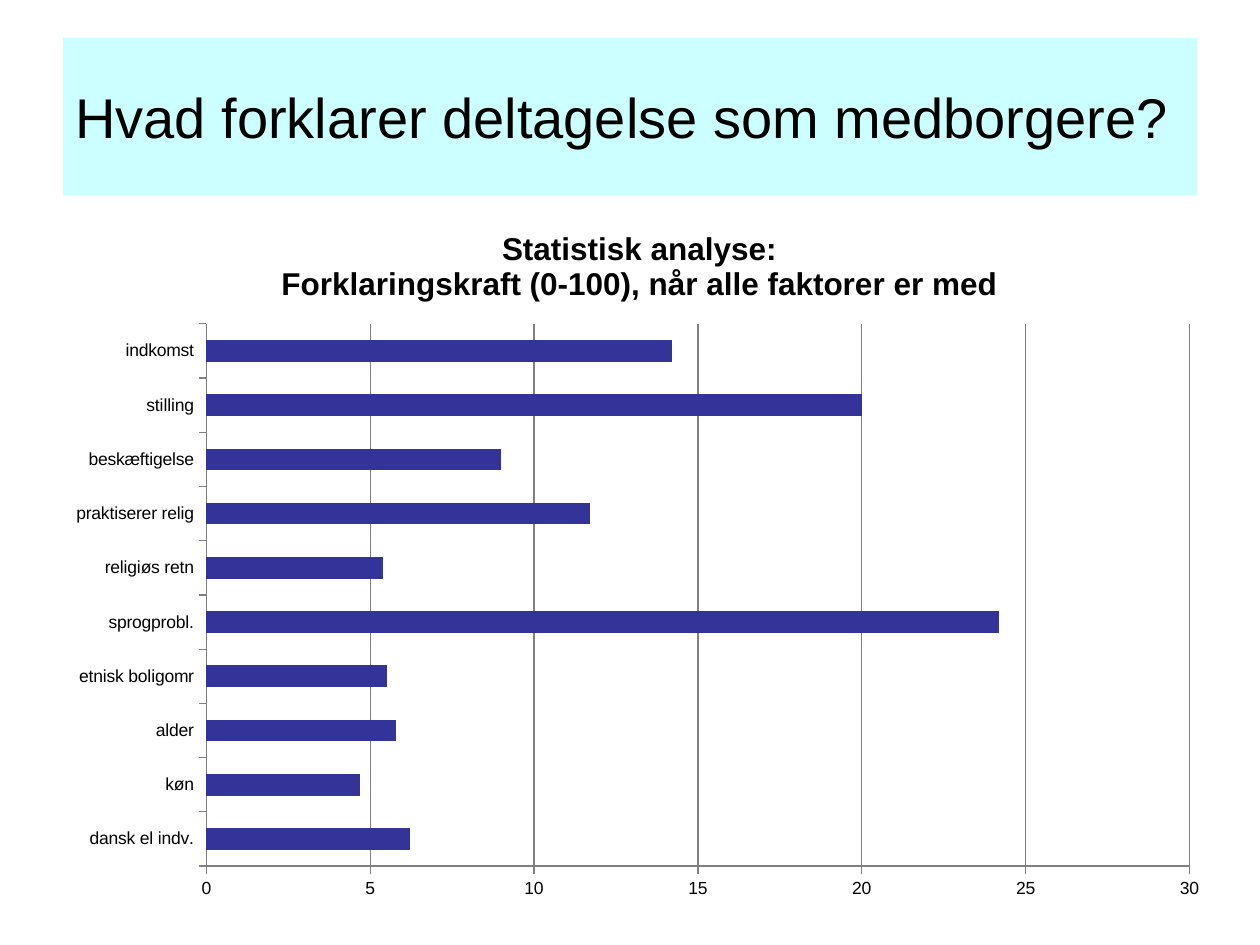
import pptx
import pptx.chart.data
import pptx.dml.color
import pptx.enum.chart
import pptx.enum.shapes
import pptx.enum.text
import pptx.oxml
import pptx.oxml.ns
import pptx.util
from pptx.util import Inches

FACTORS = {
    "dansk el indv.": 6.2,
    "køn": 4.7,
    "alder": 5.8,
    "etnisk boligomr": 5.5,
    "sprogprobl.": 24.2,
    "religiøs retn": 5.4,
    "praktiserer relig": 11.7,
    "beskæftigelse": 9,
    "stilling": 20,
    "indkomst": 14.2,
}


def color(value):
    return pptx.dml.color.RGBColor.from_string(value)


class SlideBuilder:
    typeface = "Arial"
    ink = "000000"
    banner_fill = "CCFFFF"
    bar_fill = "333399"
    grid_line = "808080"

    def __init__(self, slide):
        self.slide = slide

    def style_font(self, font, size, bold=False):
        font.name = self.typeface
        font.size = pptx.util.Pt(size)
        font.bold = bold
        font.color.rgb = color(self.ink)

    def style_line(self, line):
        line.color.rgb = color(self.grid_line)
        line.width = pptx.util.Pt(0.75)

    def banner(self, text, left, top, width, height):
        box = self.slide.shapes.add_shape(
            pptx.enum.shapes.MSO_SHAPE.RECTANGLE, left, top, width, height)
        box.shadow.inherit = False
        box.fill.solid()
        box.fill.fore_color.rgb = color(self.banner_fill)
        box.line.fill.background()
        frame = box.text_frame
        frame.word_wrap = True
        frame.vertical_anchor = pptx.enum.text.MSO_ANCHOR.MIDDLE
        frame.text = text
        para = frame.paragraphs[0]
        para.alignment = pptx.enum.text.PP_ALIGN.LEFT
        self.style_font(para.runs[0].font, 32)

    def bar_chart(self, title_lines, values, left, top, width, height):
        chart_data = pptx.chart.data.CategoryChartData()
        chart_data.categories = list(values)
        chart_data.add_series("Series 1", list(values.values()))
        chart = self.slide.shapes.add_chart(
            pptx.enum.chart.XL_CHART_TYPE.BAR_CLUSTERED,
            left, top, width, height, chart_data).chart
        chart.has_legend = False
        self.style_font(chart.font, 10)

        # Chart title
        chart.has_title = True
        frame = chart.chart_title.text_frame
        frame.text = "\n".join(title_lines)
        for para in frame.paragraphs:
            self.style_font(para.runs[0].font, 18, bold=True)
        chart.chart_title.include_in_layout = False

        # Bars
        plot = chart.plots[0]
        plot.gap_width = 150
        plot.vary_by_categories = False
        bars = plot.series[0].format
        bars.fill.solid()
        bars.fill.fore_color.rgb = color(self.bar_fill)

        # Axes and gridlines
        for axis in (chart.category_axis, chart.value_axis):
            axis.major_tick_mark = pptx.enum.chart.XL_TICK_MARK.OUTSIDE
            axis.minor_tick_mark = pptx.enum.chart.XL_TICK_MARK.NONE
            self.style_line(axis.format.line)
        scale = chart.value_axis
        scale.minimum_scale, scale.maximum_scale, scale.major_unit = 0, 30, 5
        scale.has_major_gridlines = True
        self.style_line(scale.major_gridlines.format.line)
        self.place_plot(chart, x=0.13, y=0.17, w=0.84, h=0.77)

    def place_plot(self, chart, **fractions):
        sizes = "".join(f'<c:{key} val="{value}"/>' for key, value in fractions.items())
        layout = pptx.oxml.parse_xml(
            f'<c:layout {pptx.oxml.ns.nsdecls("c")}><c:manualLayout>'
            '<c:layoutTarget val="inner"/><c:xMode val="edge"/><c:yMode val="edge"/>'
            f'{sizes}</c:manualLayout></c:layout>')
        plot_area = chart.element.find(".//" + pptx.oxml.ns.qn("c:plotArea"))
        for old_layout in plot_area.findall(pptx.oxml.ns.qn("c:layout")):
            plot_area.remove(old_layout)
        plot_area.insert(0, layout)


def main():
    deck = pptx.Presentation()
    deck.slide_width, deck.slide_height = Inches(10), Inches(7.5)
    page = SlideBuilder(deck.slides.add_slide(deck.slide_layouts[6]))

    # Heading
    page.banner("Hvad forklarer deltagelse som medborgere?",
                Inches(0.5), Inches(0.3), Inches(9), Inches(1.25))

    # Explanatory power of each factor
    page.bar_chart(
        ["Statistisk analyse:", "Forklaringskraft (0-100), når alle faktorer er med"],
        FACTORS, Inches(0.43), Inches(1.62), Inches(9.29), Inches(5.59))

    deck.save("out.pptx")


if __name__ == "__main__":
    main()
